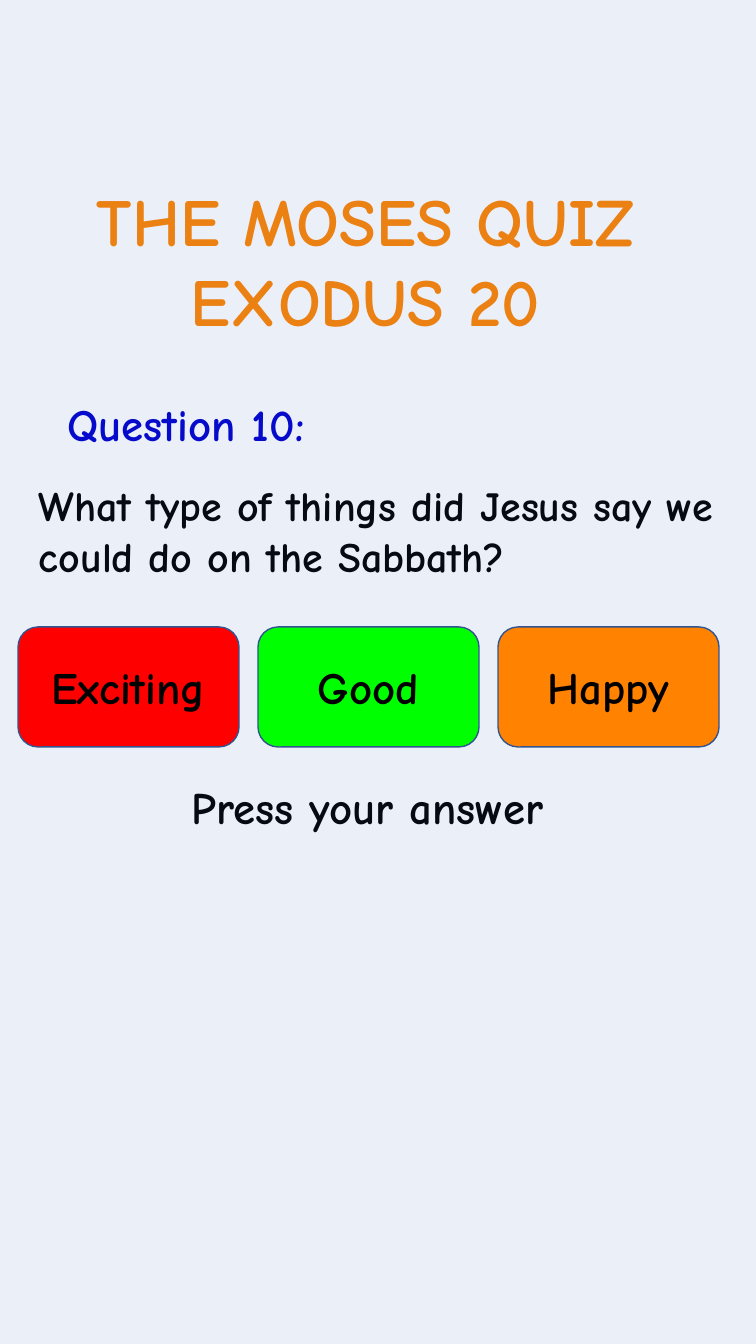
import pptx
import pptx.dml.color
import pptx.enum.shapes
import pptx.enum.text
import pptx.oxml.ns
import pptx.util
from lxml import etree

SCALE = 914400 / 100.8
FONT = "Comic Neue"
COLOURS = {
    "orange": "FF8200",
    "red": "FF0000",
    "green": "00FF00",
    "blue": "0000CC",
    "black": "000000",
    "veil": "4472C4",
    "outline": "325491",
}
ALIGN = pptx.enum.text.PP_ALIGN
SHAPE = pptx.enum.shapes.MSO_SHAPE


def px(length):
    """Turn pixels into EMU."""
    return pptx.util.Emu(round(length * SCALE))


def rgb(name):
    """Look up a named colour."""
    return pptx.dml.color.RGBColor.from_string(COLOURS[name])


class QuizSlide:
    """Holds the quiz style and the slide being built."""

    def __init__(self, deck):
        """Add a blank slide to the deck."""
        self.page = deck.slides.add_slide(deck.slide_layouts[6])

    def add_lines(self, frame, lines, size, colour, align, spacing=None, before=None):
        """Add one paragraph for each line of text."""
        for index, line in enumerate(lines):
            para = frame.add_paragraph() if index else frame.paragraphs[0]
            para.alignment = align
            para.line_spacing = spacing
            para.space_before = before
            span = para.add_run()
            span.text = line
            span.font.name = FONT
            span.font.size = pptx.util.Pt(size)
            span.font.bold = True
            span.font.color.rgb = rgb(colour)

    def text(self, area, lines, size, colour, align=ALIGN.LEFT, wrap=True,
             spacing=None, before=None):
        """Add a text box, growing with its text if it does not wrap."""
        box = self.page.shapes.add_textbox(*map(px, area))
        box.text_frame.word_wrap = wrap
        if not wrap:
            box.text_frame.auto_size = pptx.enum.text.MSO_AUTO_SIZE.SHAPE_TO_FIT_TEXT
        self.add_lines(box.text_frame, lines, size, colour, align, spacing, before)

    def panel(self, kind, area, fill):
        """Add a filled shape with the common outline."""
        box = self.page.shapes.add_shape(kind, *map(px, area))
        box.shadow.inherit = False
        box.fill.solid()
        box.fill.fore_color.rgb = rgb(fill)
        box.line.color.rgb = rgb("outline")
        box.line.width = pptx.util.Pt(1)
        return box

    def veil(self, area, opacity):
        """Add a transparent tint; opacity is a percentage."""
        box = self.panel(SHAPE.RECTANGLE, area, "veil")
        qn = pptx.oxml.ns.qn
        colour = box.element.spPr.find(qn("a:solidFill")).find(qn("a:srgbClr"))
        etree.SubElement(colour, qn("a:alpha"), val=str(opacity * 1000))

    def button(self, area, label, fill):
        """Add a rounded answer button."""
        box = self.panel(SHAPE.ROUNDED_RECTANGLE, area, fill)
        box.text_frame.vertical_anchor = pptx.enum.text.MSO_ANCHOR.MIDDLE
        self.add_lines(box.text_frame, [label], 32, "black", ALIGN.CENTER)


def main():
    """Build and save the quiz slide."""
    deck = pptx.Presentation()
    deck.slide_width, deck.slide_height = px(756), px(1344)
    quiz = QuizSlide(deck)
    before = pptx.util.Pt(7.5)

    quiz.text((30, 174, 695, 173), ["THE MOSES QUIZ ", "EXODUS 20 "], 48, "orange",
              ALIGN.CENTER, wrap=False)
    quiz.text((182, 781, 425, 73), ["Press your answer"], 32, "black",
              spacing=0.9, before=before)
    quiz.text((33, 392, 306, 65), ["Question 10:"], 32, "blue", ALIGN.CENTER, wrap=False)
    quiz.text((29, 475, 716, 120),
              ["What type of things did Jesus say we could do on the Sabbath?"],
              30, "black", spacing=pptx.util.Pt(36), before=before)
    quiz.veil((-24, -22, 823, 1389), 10)

    answers = [("Exciting", "red"), ("Good", "green"), ("Happy", "orange")]
    for column, (label, fill) in enumerate(answers):
        quiz.button((18 + 240 * column, 627, 221, 120), label, fill)

    deck.save("out.pptx")


if __name__ == "__main__":
    main()
